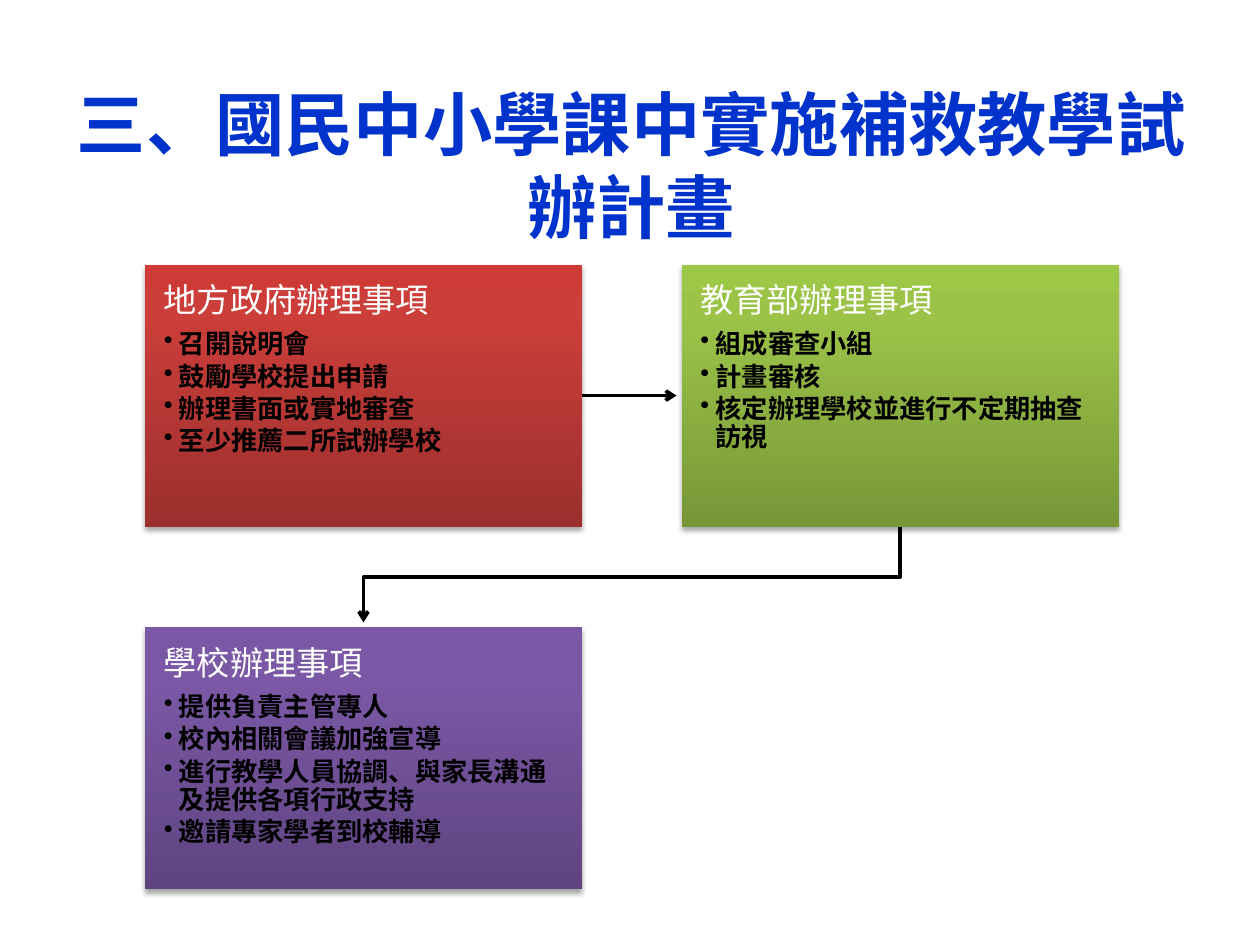
from copy import deepcopy
from dataclasses import dataclass

from lxml import etree
from pptx import Presentation, util as u
from pptx.dml.color import RGBColor
from pptx.enum import shapes, text
from pptx.oxml import parse_xml
from pptx.oxml.ns import nsdecls, qn

FONT = "Cambria"
BLUE = RGBColor(0x00, 0x33, 0xCC)
BLACK = RGBColor(0x00, 0x00, 0x00)
WHITE = RGBColor(0xFF, 0xFF, 0xFF)
REDS = (RGBColor(0x9C, 0x2F, 0x2D), RGBColor(0xCB, 0x3E, 0x3A), RGBColor(0xCE, 0x3B, 0x37))
GREENS = (RGBColor(0x77, 0x97, 0x37), RGBColor(0x9B, 0xC3, 0x48), RGBColor(0x9D, 0xC7, 0x46))
PURPLES = (RGBColor(0x5F, 0x44, 0x80), RGBColor(0x7B, 0x58, 0xA6), RGBColor(0x7C, 0x57, 0xA8))

LEFT, TOP = u.Inches(1.15), u.Inches(2.1)
WIDTH, HEIGHT = u.Inches(3.47), u.Inches(2.08)
COLUMN_STEP, ROW_STEP = u.Inches(4.26), u.Inches(2.88)
ARROW_GAP = u.Inches(0.04)
ELBOW_DROP = u.Inches(0.4)


@dataclass(frozen=True)
class Card:
    column: int
    row: int
    colors: tuple[RGBColor, ...]
    heading: str
    duties: tuple[str, ...]


CARDS = (
    Card(0, 0, REDS, "地方政府辦理事項",
         ("召開說明會", "鼓勵學校提出申請", "辦理書面或實地審查", "至少推薦二所試辦學校")),
    Card(1, 0, GREENS, "教育部辦理事項",
         ("組成審查小組", "計畫審核", "核定辦理學校並進行不定期抽查訪視")),
    Card(0, 1, PURPLES, "學校辦理事項",
         ("提供負責主管專人", "校內相關會議加強宣導",
          "進行教學人員協調、與家長溝通及提供各項行政支持", "邀請專家學者到校輔導")),
)


def style_font(font, size: float, color: RGBColor, bold: bool) -> None:
    font.name, font.size, font.bold = FONT, u.Pt(size), bold
    font.color.rgb = color


def add_title(page, wording: str) -> None:
    box = page.shapes.add_textbox(u.Inches(0.51), u.Inches(0.68), u.Inches(9), u.Inches(1.25))
    frame = box.text_frame
    frame.word_wrap = True
    frame.vertical_anchor = text.MSO_ANCHOR.MIDDLE
    para = frame.paragraphs[0]
    para.text = wording
    para.alignment = text.PP_ALIGN.CENTER
    style_font(para.font, 39.6, BLUE, True)


def fill_gradient(box, colors: tuple[RGBColor, ...]) -> None:
    box.fill.gradient()
    box.fill.gradient_angle = 90
    stop_list = box._element.spPr.find(".//" + qn("a:gsLst"))
    stop_list.append(deepcopy(stop_list[-1]))
    for stop, position, color in zip(box.fill.gradient_stops, (0, 0.8, 1), colors):
        stop.position = position
        stop.color.rgb = color


def cast_shadow(box) -> None:
    box.shadow.inherit = False
    box._element.spPr.find(qn("a:effectLst")).append(parse_xml(
        f'<a:outerShdw {nsdecls("a")} blurRad="{u.Pt(3.1)}" dist="{u.Pt(1.8)}" dir="5400000" '
        'rotWithShape="0"><a:srgbClr val="000000"><a:alpha val="35000"/></a:srgbClr></a:outerShdw>'))


def add_bullet(para) -> None:
    properties = para._p.get_or_add_pPr()
    properties.set("marL", str(u.Inches(0.12)))
    properties.set("indent", str(-u.Inches(0.12)))
    etree.SubElement(properties, qn("a:buChar")).set("char", "•")


def add_card(page, card: Card):
    box = page.shapes.add_shape(
        shapes.MSO_SHAPE.RECTANGLE, LEFT + card.column * COLUMN_STEP,
        TOP + card.row * ROW_STEP, WIDTH, HEIGHT)
    fill_gradient(box, card.colors)
    box.line.fill.background()
    cast_shadow(box)
    frame = box.text_frame
    frame.word_wrap = True
    frame.vertical_anchor = text.MSO_ANCHOR.TOP
    frame.margin_left = frame.margin_right = u.Inches(0.15)
    frame.margin_top = frame.margin_bottom = u.Inches(0.15)
    for index, wording in enumerate((card.heading, *card.duties)):
        is_duty = index > 0
        para = frame.add_paragraph() if is_duty else frame.paragraphs[0]
        para.text = wording
        para.alignment = text.PP_ALIGN.LEFT
        para.line_spacing = 0.9
        para.space_after = u.Pt(2.25 if is_duty else 6.65)
        if is_duty:
            para.level = 1
            add_bullet(para)
            style_font(para.font, 15, BLACK, True)
        else:
            style_font(para.font, 19, WHITE, False)
    return box


def style_arrow(arrow) -> None:
    arrow.line.color.rgb = BLACK
    arrow.line.width = u.Pt(2)
    etree.SubElement(arrow.line._get_or_add_ln(), qn("a:tailEnd")).set("type", "arrow")


def add_straight_arrow(page, start, end) -> None:
    middle = start.top + start.height // 2
    arrow = page.shapes.add_connector(
        shapes.MSO_CONNECTOR.STRAIGHT, start.left + start.width, middle,
        end.left - ARROW_GAP, middle)
    arrow.begin_connect(start, 3)
    style_arrow(arrow)
    etree.SubElement(arrow._element.spPr, qn("a:effectLst"))


def add_elbow_arrow(page, start, end) -> None:
    start_x, start_y = start.left + start.width // 2, start.top + start.height
    end_x = end.left + end.width // 2
    turn_y = start_y + ELBOW_DROP
    builder = page.shapes.build_freeform(start_x, start_y)
    builder.add_line_segments(
        [(start_x, turn_y), (end_x, turn_y), (end_x, end.top - ARROW_GAP)], close=False)
    arrow = builder.convert_to_shape()
    arrow.fill.background()
    arrow.shadow.inherit = False
    style_arrow(arrow)


def main() -> None:
    """Build the slide on the remedial teaching trial plan."""
    deck = Presentation()
    deck.slide_width, deck.slide_height = u.Inches(10), u.Inches(7.5)
    page = deck.slides.add_slide(deck.slide_layouts[6])
    add_title(page, "三、國民中小學課中實施補救教學試辦計畫")
    government, ministry, school = [add_card(page, card) for card in CARDS]
    add_straight_arrow(page, government, ministry)
    add_elbow_arrow(page, ministry, school)
    deck.save("out.pptx")


if __name__ == "__main__":
    main()
